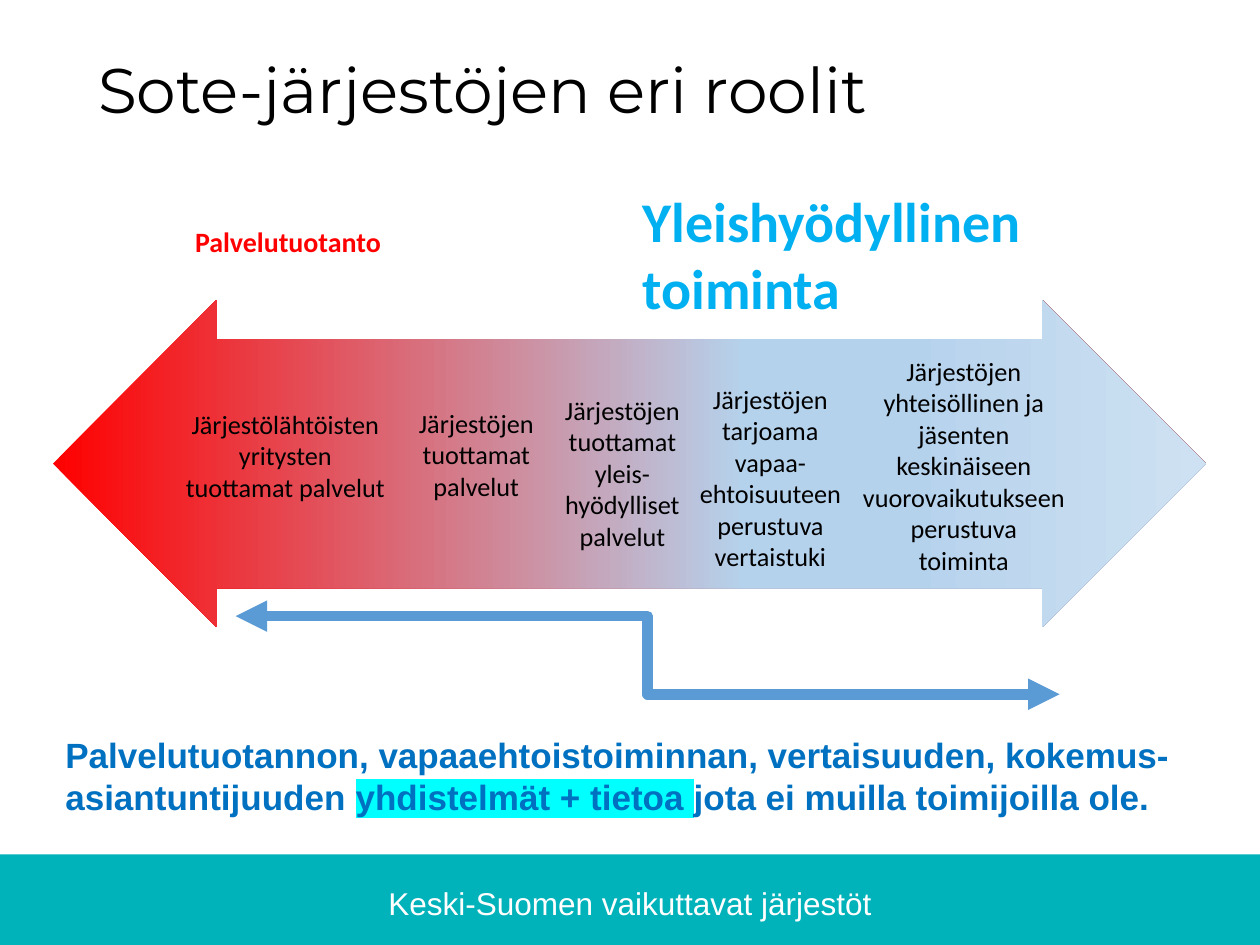
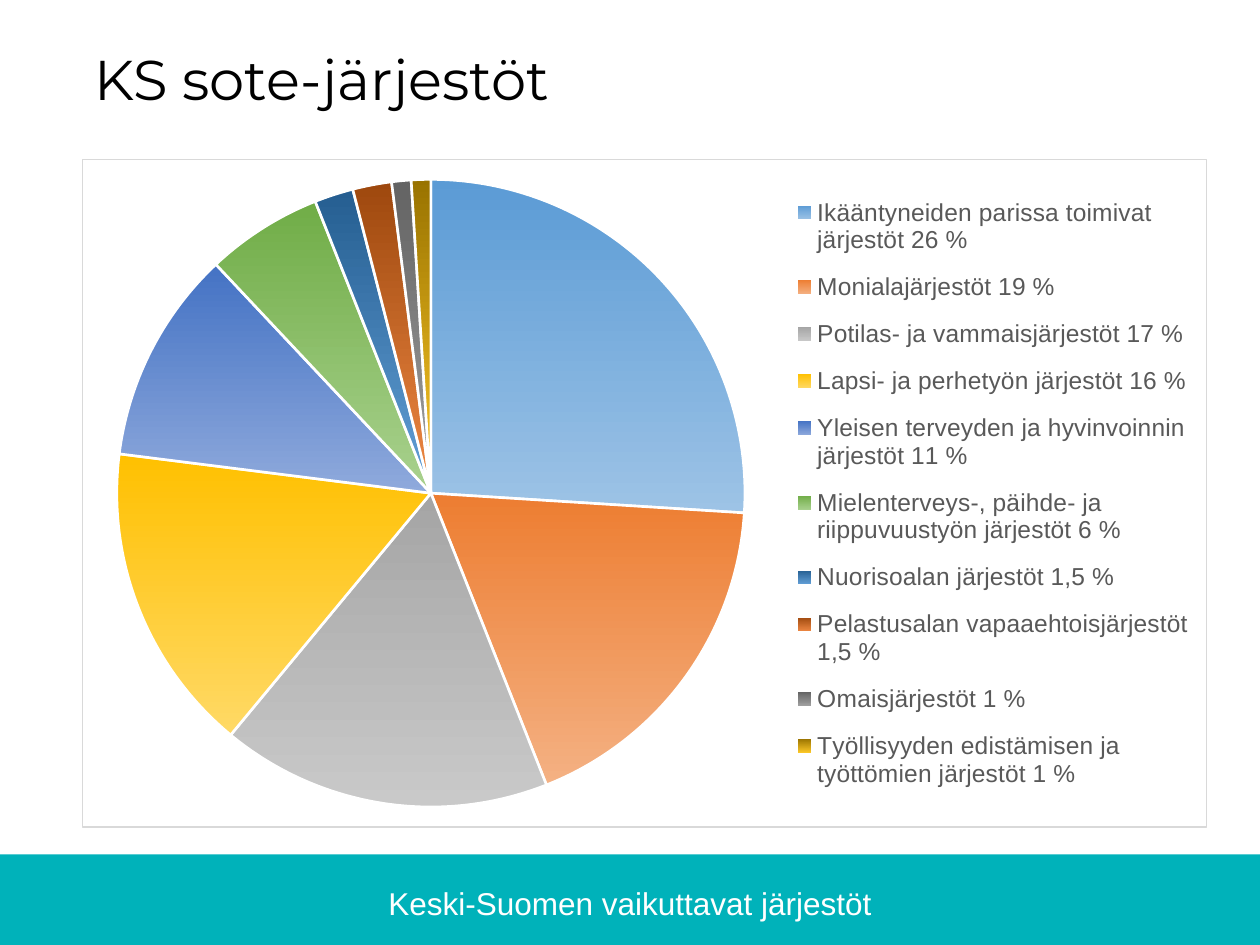
from copy import deepcopy

from lxml import etree
from pptx import Presentation
from pptx.chart.data import CategoryChartData
from pptx.dml.color import RGBColor
from pptx.enum.chart import XL_CHART_TYPE, XL_LEGEND_POSITION
from pptx.enum.shapes import MSO_CONNECTOR, MSO_SHAPE
from pptx.enum.text import MSO_ANCHOR, PP_ALIGN
from pptx.oxml import parse_xml
from pptx.oxml.ns import nsdecls, qn
from pptx.util import Inches, Pt

PIE = XL_CHART_TYPE.PIE
LEGEND_RIGHT = XL_LEGEND_POSITION.RIGHT
ELBOW = MSO_CONNECTOR.ELBOW
RECTANGLE = MSO_SHAPE.RECTANGLE
LEFT_RIGHT_ARROW = MSO_SHAPE.LEFT_RIGHT_ARROW
TOP, MIDDLE = MSO_ANCHOR.TOP, MSO_ANCHOR.MIDDLE
LEFT, CENTER = PP_ALIGN.LEFT, PP_ALIGN.CENTER

COLORS = {
    "band": "00B2BA",
    "white": "FFFFFF",
    "black": "000000",
    "red": "FF0000",
    "sky": "00B0F0",
    "connector": "5B9BD5",
    "summary": "0070C0",
    "highlight": "00FFFF",
    "border": "D9D9D9",
    "legend": "595959",
}


def add_text(slide, box, paragraphs, font, size, color, bold=False, align=LEFT, anchor=TOP, spacing=1.0):
    frame = slide.shapes.add_textbox(*map(Inches, box)).text_frame
    frame.word_wrap = True
    frame.vertical_anchor = anchor
    for index, runs in enumerate(paragraphs):
        paragraph = frame.add_paragraph() if index else frame.paragraphs[0]
        for text in runs:
            paragraph.add_run().text = text
        paragraph.alignment = align
        paragraph.line_spacing = spacing
        paragraph.font.name = font
        paragraph.font.size = Pt(size)
        paragraph.font.bold = bold
        paragraph.font.color.rgb = RGBColor.from_string(COLORS[color])
    return frame


def color_gradient(fill, angle, stops):
    fill.gradient_angle = angle
    for stop, (position, color) in zip(fill.gradient_stops, stops):
        stop.position = position
        stop.color.rgb = RGBColor.from_string(color)


presentation = Presentation()
presentation.slide_width = Inches(10)
presentation.slide_height = Inches(7.5)

titles = [
    ("Sote-järjestöjen eri roolit", (0.68, 0.34, 8.58, 0.8), 36),
    ("KS sote-järjestöt", (0.65, 0.16, 7.78, 0.98), 32),
]
for title, box, size in titles:
    slide = presentation.slides.add_slide(presentation.slide_layouts[6])
    band = slide.shapes.add_shape(RECTANGLE, Inches(0), Inches(6.78), Inches(10), Inches(0.72))
    band.shadow.inherit = False
    band.fill.solid()
    band.fill.fore_color.rgb = RGBColor.from_string(COLORS["band"])
    band.line.fill.background()
    add_text(slide, (0, 6.97, 10, 0.4), [["Keski-Suomen vaikuttavat järjestöt"]],
             "Arial", 18, "white", align=CENTER)
    add_text(slide, box, [[title]], "Montserrat", size, "black", anchor=MIDDLE, spacing=0.9)

roles_slide, chart_slide = presentation.slides

arrow = roles_slide.shapes.add_shape(LEFT_RIGHT_ARROW, Inches(0.42), Inches(2.38), Inches(9.15), Inches(2.6))
arrow.shadow.inherit = False
arrow.adjustments[0] = 0.76
arrow.adjustments[1] = 0.5
arrow.line.fill.background()
arrow.fill.gradient()
stop_list = next(arrow._element.iter(qn("a:gsLst")))
for _ in range(2):
    stop_list.append(deepcopy(stop_list[0]))
color_gradient(arrow.fill, 0, [(0, "FF0000"), (0.6, "B5D2EC"), (0.74, "B5D2EC"), (1, "CEE1F2")])

roles = [
    ((1.36, 3.19, 1.81, 0.86), [["Järjestölähtöisten yritysten tuottamat palvelut"]]),
    ((3.09, 3.18, 1.38, 0.86), [["Järjestöjen tuottamat palvelut"]]),
    ((4.32, 3.08, 1.24, 1.37), [["Järjestöjen tuottamat yleis-hyödylliset palvelut"]]),
    ((5.38, 2.99, 1.47, 1.62), [["Järjestöjen tarjoama vapaa-ehtoisuuteen perustuva vertaistuki"]]),
    ((6.68, 2.77, 1.94, 1.87),
     [["Järjestöjen yhteisöllinen ja jäsenten keskinäiseen vuorovaikutukseen perustuva"], ["toiminta"]]),
]
for box, role in roles:
    add_text(roles_slide, box, role, "Calibri", 15, "black", align=CENTER)

add_text(roles_slide, (5, 1.43, 4.34, 1.18), [["Yleishyödyllinen toiminta"]], "Calibri", 32, "sky", bold=True)
add_text(roles_slide, (1.45, 1.73, 2.62, 0.37), [["Palvelutuotanto"]], "Calibri", 16, "red", bold=True)

connector = roles_slide.shapes.add_connector(ELBOW, Inches(1.87), Inches(4.89), Inches(8.41), Inches(5.51))
connector.line.color.rgb = RGBColor.from_string(COLORS["connector"])
connector.line.width = Pt(6)
connector_properties = connector._element.spPr
line = connector_properties.find(qn("a:ln"))
for end in ("a:headEnd", "a:tailEnd"):
    etree.SubElement(line, qn(end), type="triangle")
etree.SubElement(connector_properties, qn("a:effectLst"))

summary = add_text(
    roles_slide, (0.42, 5.77, 9.08, 0.77),
    [["Palvelutuotannon, vapaaehtoistoiminnan, vertaisuuden, kokemus-asiantuntijuuden ",
      "yhdistelmät + tietoa ", "jota ei muilla toimijoilla ole."]],
    "Arial", 20, "summary", bold=True)
run_properties = summary.paragraphs[0].runs[1]._r.get_or_add_rPr()
highlight = etree.SubElement(run_properties, qn("a:highlight"))
etree.SubElement(highlight, qn("a:srgbClr"), val=COLORS["highlight"])

organisations = [
    ("Ikääntyneiden parissa toimivat järjestöt 26 %", 26, "5B9BD5", "9DC3E6"),
    ("Monialajärjestöt 19 %", 18, "ED7D31", "F4B183"),
    ("Potilas- ja vammaisjärjestöt 17 %", 17, "A5A5A5", "C9C9C9"),
    ("Lapsi- ja perhetyön järjestöt 16 %", 16, "FFC000", "FFD966"),
    ("Yleisen terveyden ja hyvinvoinnin järjestöt 11 %", 11, "4472C4", "8FAADC"),
    ("Mielenterveys-, päihde- ja riippuvuustyön järjestöt 6 %", 6, "70AD47", "A9D18E"),
    ("Nuorisoalan järjestöt 1,5 %", 2, "255E91", "63A0D7"),
    ("Pelastusalan vapaaehtoisjärjestöt 1,5 %", 2, "9E480E", "EF8944"),
    ("Omaisjärjestöt 1 %", 1, "636363", "A1A1A1"),
    ("Työllisyyden edistämisen ja työttömien järjestöt 1 %", 1, "997300", "FFCA29"),
]
chart_data = CategoryChartData()
chart_data.categories = [organisation[0] for organisation in organisations]
chart_data.add_series("Series 1", [organisation[1] for organisation in organisations])
chart = chart_slide.shapes.add_chart(
    PIE, Inches(0.65), Inches(1.26), Inches(8.93), Inches(5.31), chart_data).chart
chart.has_title = False
chart.font.name = "Arial"
chart.font.size = Pt(10)
chart.font.color.rgb = RGBColor.from_string(COLORS["black"])
chart.has_legend = True
chart.legend.position = LEGEND_RIGHT
chart.legend.include_in_layout = False
chart.legend.font.name = "Arial"
chart.legend.font.size = Pt(14)
chart.legend.font.color.rgb = RGBColor.from_string(COLORS["legend"])

for index, (_, _, top_color, bottom_color) in enumerate(organisations):
    slice_format = chart.plots[0].series[0].points[index].format
    slice_format.fill.gradient()
    color_gradient(slice_format.fill, 270, [(0, top_color), (1, bottom_color)])
    slice_format.line.color.rgb = RGBColor.from_string(COLORS["white"])
    slice_format.line.width = Pt(1.5)

chart_element = chart._chartSpace.find(qn("c:chart"))
layouts = [
    ("c:plotArea", 0, {"layoutTarget": "inner", "xMode": "edge", "yMode": "edge",
                       "x": "0.03", "y": "0.03", "w": "0.56", "h": "0.94"}),
    ("c:legend", 1, {"xMode": "edge", "yMode": "edge",
                     "x": "0.63", "y": "0.03", "w": "0.36", "h": "0.94"}),
]
for tag, position, settings in layouts:
    parent = chart_element.find(qn(tag))
    for old_layout in parent.findall(qn("c:layout")):
        parent.remove(old_layout)
    layout = etree.Element(qn("c:layout"))
    manual_layout = etree.SubElement(layout, qn("c:manualLayout"))
    for name, value in settings.items():
        etree.SubElement(manual_layout, qn(f"c:{name}"), val=value)
    parent.insert(position, layout)

chart_element.addnext(parse_xml(
    f'<c:spPr {nsdecls("c", "a")}>'
    f'<a:solidFill><a:srgbClr val="{COLORS["white"]}"/></a:solidFill>'
    f'<a:ln w="{Pt(0.75)}"><a:solidFill><a:srgbClr val="{COLORS["border"]}"/></a:solidFill></a:ln>'
    '</c:spPr>'))

presentation.save("out.pptx")
